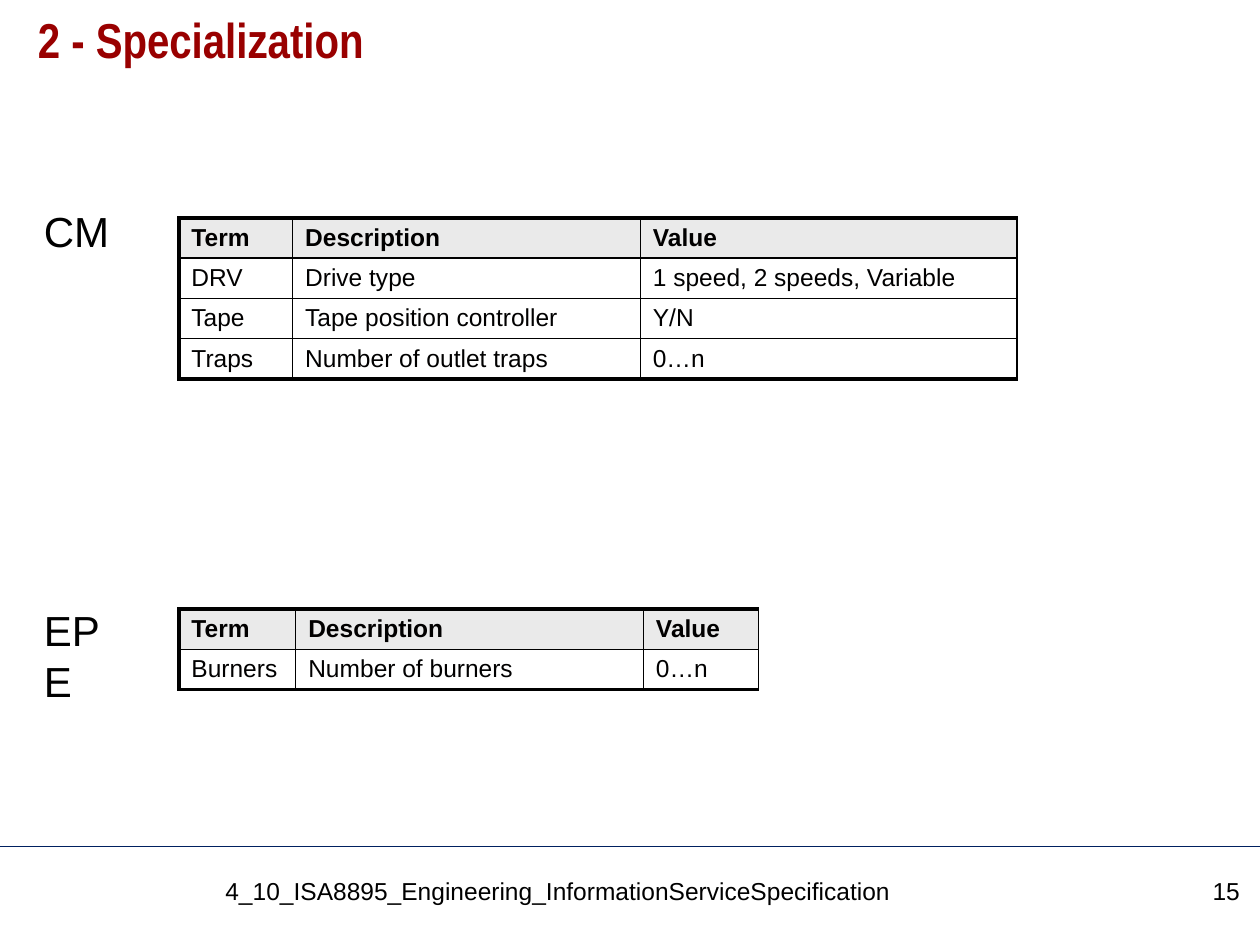
from lxml import etree
from pptx import Presentation
from pptx.dml.color import RGBColor
from pptx.enum.shapes import MSO_CONNECTOR
from pptx.enum.text import MSO_ANCHOR, MSO_AUTO_SIZE, PP_ALIGN
from pptx.oxml import parse_xml
from pptx.oxml.ns import nsdecls, qn
from pptx.util import Pt

LEFT, RIGHT = PP_ALIGN.LEFT, PP_ALIGN.RIGHT
TOP = MSO_ANCHOR.TOP
NO_FIT, GROW = MSO_AUTO_SIZE.NONE, MSO_AUTO_SIZE.SHAPE_TO_FIT_TEXT
STRAIGHT = MSO_CONNECTOR.STRAIGHT

HEADER = ["Term", "Description", "Value"]
CM_ROWS = [
    HEADER,
    ["DRV", "Drive type", "1 speed, 2 speeds, Variable"],
    ["Tape", "Tape position controller", "Y/N"],
    ["Traps", "Number of outlet traps", "0…n"],
]
EPE_ROWS = [HEADER, ["Burners", "Number of burners", "0…n"]]


def rgb(value):
    return RGBColor.from_string(value)


def write(tf, text, size=14, font="Arial", color="000000", bold=False,
          align=LEFT, spacing=None):
    p = tf.paragraphs[0]
    p.alignment = align
    p.line_spacing = spacing
    r = p.add_run()
    r.text = text
    r.font.name, r.font.size, r.font.bold = font, Pt(size), bold
    r.font.color.rgb = rgb(color)


def set_borders(cell, **widths):
    """Draw black cell edges; keys are L, R, T and B, widths in points."""
    tcPr = cell._tc.get_or_add_tcPr()
    for i, side in enumerate("LRTB"):
        tcPr.insert(i, parse_xml(
            f'<a:ln{side} {nsdecls("a")} w="{Pt(widths[side])}"><a:solidFill>'
            f'<a:srgbClr val="000000"/></a:solidFill></a:ln{side}>'))


class SlideBuilder:
    accent, rule, header_fill, cell_text = "990000", "002060", "EAEAEA", "010000"
    thin, thick = 1, 2.25
    row_height = 23

    def __init__(self, prs):
        self.s = prs.slides.add_slide(prs.slide_layouts[5])

    def title(self, text, x, y, w, h):
        sp = self.s.shapes.title
        sp.left, sp.top, sp.width, sp.height = Pt(x), Pt(y), Pt(w), Pt(h)
        tf = sp.text_frame
        tf.vertical_anchor, tf.auto_size = TOP, NO_FIT
        write(tf, text, size=28, font="Arial Narrow", color=self.accent,
              bold=True, spacing=0.9)

    def text(self, text, x, y, w, h, wrap=True, **style):
        tf = self.s.shapes.add_textbox(Pt(x), Pt(y), Pt(w), Pt(h)).text_frame
        tf.word_wrap = wrap
        tf.auto_size = NO_FIT if wrap else GROW
        write(tf, text, **style)

    def line(self, x1, y1, x2, y2):
        sp = self.s.shapes.add_connector(STRAIGHT, Pt(x1), Pt(y1), Pt(x2), Pt(y2))
        sp.line.color.rgb = rgb(self.rule)
        sp.line.width = Pt(0.75)
        etree.SubElement(sp._element.spPr, qn("a:effectLst"))

    def table(self, rows, x, y, widths):
        shape = self.s.shapes.add_table(
            len(rows), len(widths), Pt(x), Pt(y),
            Pt(sum(widths)), Pt(self.row_height * len(rows)))
        table = shape.table
        table.first_row = table.horz_banding = False
        for column, width in zip(table.columns, widths):
            column.width = Pt(width)
        for i, row in enumerate(rows):
            table.rows[i].height = Pt(self.row_height)
            for j, text in enumerate(row):
                self.cell(table.cell(i, j), text, header=i == 0,
                          first=j == 0, last=i == len(rows) - 1)

    def cell(self, cell, text, header, first, last):
        if header:
            cell.fill.solid()
            cell.fill.fore_color.rgb = rgb(self.header_fill)
        else:
            cell.fill.background()
        set_borders(cell, L=self.thick if first else self.thin, R=self.thin,
                    T=self.thick if header else self.thin,
                    B=self.thick if last else self.thin)
        write(cell.text_frame, text, color=self.cell_text, bold=header)


def main():
    prs = Presentation()
    prs.slide_width, prs.slide_height = Pt(720), Pt(540)
    slide = SlideBuilder(prs)
    slide.line(0, 483.84, 720, 483.84)
    slide.title("2 - Specialization", 14.4, 5.8, 692, 59.8)
    slide.text("4_10_ISA8895_Engineering_InformationServiceSpecification",
               121.7, 496.8, 519, 32.4)
    slide.text("15", 649.4, 496.8, 66.2, 32.4, align=RIGHT)
    slide.table(CM_ROWS, 102.2, 124.5, [65, 198.7, 215.3])
    slide.table(EPE_ROWS, 102.2, 348, [66.8, 198.7, 65.8])
    slide.text("CM", 18, 113.8, 51.8, 36.4, wrap=False, size=24)
    slide.text("EPE", 18, 342, 61.9, 36.4, wrap=False, size=24)
    prs.save("out.pptx")


if __name__ == "__main__":
    main()
